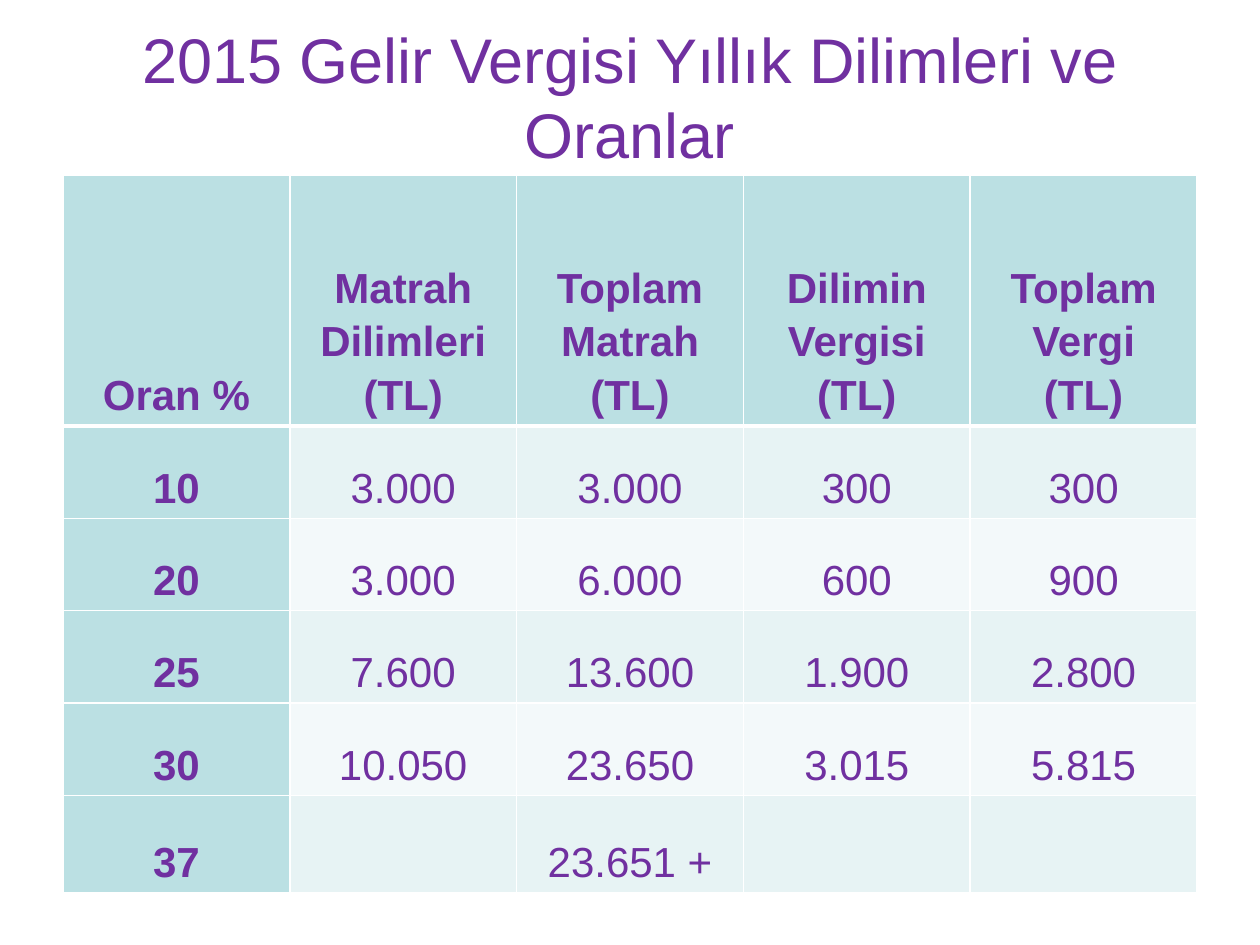
import pptx
import pptx.util
import pptx.dml.color
import pptx.enum.text
import pptx.oxml
import pptx.oxml.ns

Pt = pptx.util.Pt
ALIGN = pptx.enum.text.PP_ALIGN
ANCHOR = pptx.enum.text.MSO_ANCHOR

COLORS = {
    "text": "7030A0",
    "header": "BBE0E3",
    "odd": "E7F3F4",
    "even": "F3F9FA",
    "border": "FFFFFF",
}
TITLE = "2015 Gelir Vergisi Yıllık Dilimleri ve Oranlar"
ROWS = [
    ["Oran %", "Matrah Dilimleri (TL)", "Toplam Matrah (TL)",
     "Dilimin Vergisi (TL)", "Toplam Vergi (TL)"],
    ["10", "3.000", "3.000", "300", "300"],
    ["20", "3.000", "6.000", "600", "900"],
    ["25", "7.600", "13.600", "1.900", "2.800"],
    ["30", "10.050", "23.650", "3.015", "5.815"],
    ["37", "", "23.651 +", "", ""],
]
ROW_HEIGHTS = [143.2] + [52.8] * 4 + [55.6]
COL_WIDTH = 129.6
LEFT, TABLE_TOP, WIDTH = 36, 100.2, 648
CELL_FORMAT = {
    "vertical_anchor": ANCHOR.BOTTOM,
    "margin_left": Pt(15), "margin_right": Pt(15),
    "margin_top": Pt(3.6), "margin_bottom": Pt(3.6),
}


def rgb(name):
    return pptx.dml.color.RGBColor.from_string(COLORS[name])


def apply(obj, values):
    for name, value in values.items():
        setattr(obj, name, value)


def write(tf, text, size, bold=False, spacing=None):
    p = tf.paragraphs[0]
    apply(p, {"alignment": ALIGN.CENTER, "line_spacing": spacing})
    if text:
        r = p.add_run()
        r.text = text
        apply(r.font, {"name": "Arial", "size": Pt(size), "bold": bold})
        r.font.color.rgb = rgb("text")


def set_borders(cell, widths):
    """Draw cell edges; widths maps L, R, T and B to points."""
    tc_pr = cell._tc.get_or_add_tcPr()
    for i, (side, width) in enumerate(widths.items()):
        ln = pptx.oxml.parse_xml(
            f'<a:ln{side} {pptx.oxml.ns.nsdecls("a")} w="{Pt(width)}">'
            f'<a:solidFill><a:srgbClr val="{COLORS["border"]}"/></a:solidFill>'
            f'</a:ln{side}>')
        tc_pr.insert(i, ln)


def add_title(s):
    sp = s.shapes.title
    apply(sp, {"left": Pt(LEFT), "top": Pt(9.4),
               "width": Pt(WIDTH), "height": Pt(90.8)})
    apply(sp.text_frame, {"word_wrap": True, "vertical_anchor": ANCHOR.MIDDLE,
                          "auto_size": pptx.enum.text.MSO_AUTO_SIZE.NONE})
    write(sp.text_frame, TITLE, 36)


def fill_cell(cell, text, row, col):
    heading = row == 0 or col == 0
    apply(cell, CELL_FORMAT)
    cell.fill.solid()
    band = "odd" if row % 2 else "even"
    cell.fill.fore_color.rgb = rgb("header" if heading else band)
    set_borders(cell, {"L": 1, "R": 1, "T": 3 if row == 1 else 1,
                       "B": 3 if row == 0 else 1})
    write(cell.text_frame, text, 24, heading, 1.15)


def add_tax_table(s):
    table = s.shapes.add_table(
        len(ROWS), len(ROWS[0]), Pt(LEFT), Pt(TABLE_TOP),
        Pt(WIDTH), Pt(sum(ROW_HEIGHTS))).table
    for column in table.columns:
        column.width = Pt(COL_WIDTH)
    for row, texts in enumerate(ROWS):
        table.rows[row].height = Pt(ROW_HEIGHTS[row])
        for col, text in enumerate(texts):
            fill_cell(table.cell(row, col), text, row, col)


def main():
    prs = pptx.Presentation()
    apply(prs, {"slide_width": Pt(720), "slide_height": Pt(540)})
    s = prs.slides.add_slide(prs.slide_layouts[5])
    add_title(s)
    add_tax_table(s)
    prs.save("out.pptx")


if __name__ == "__main__":
    main()
